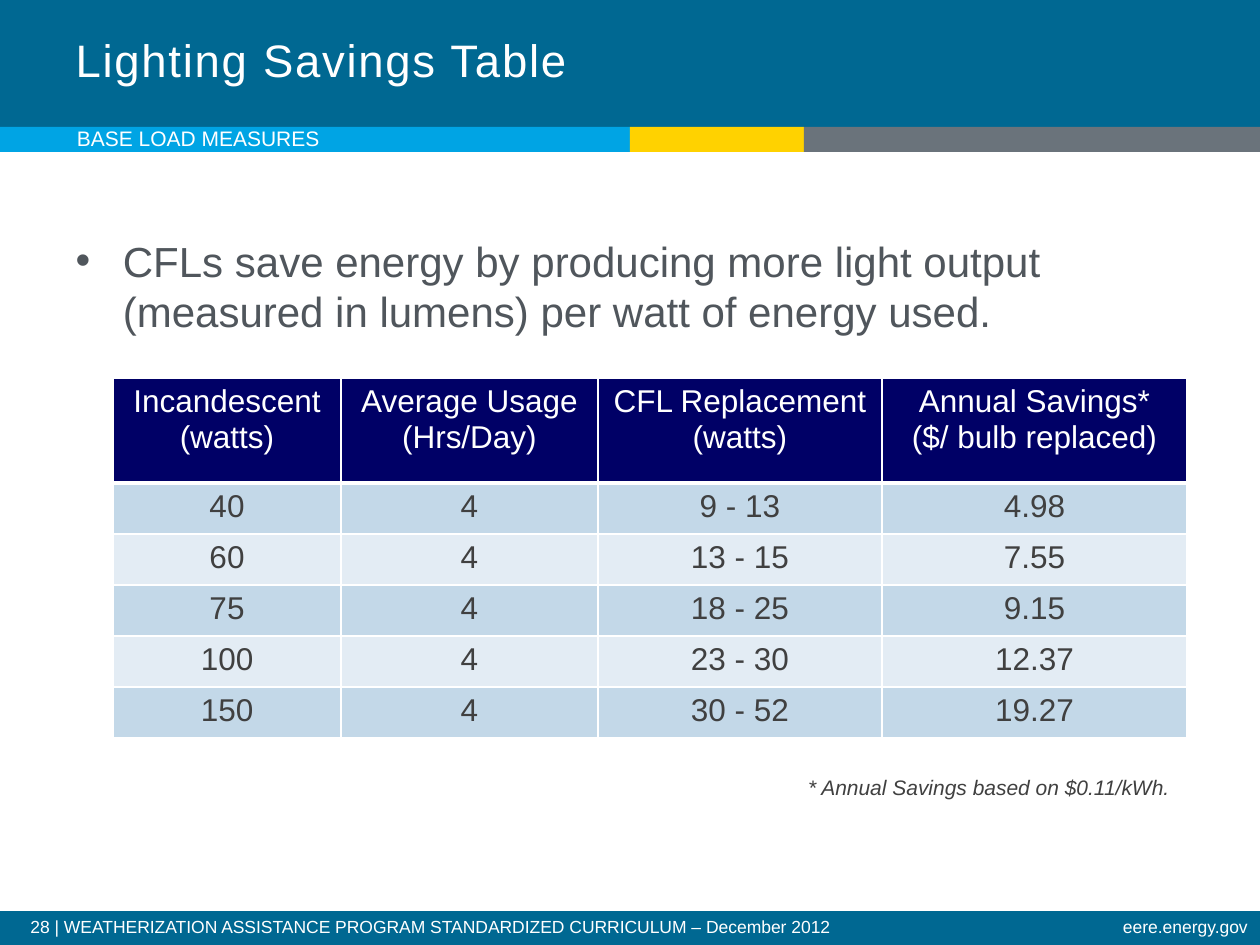
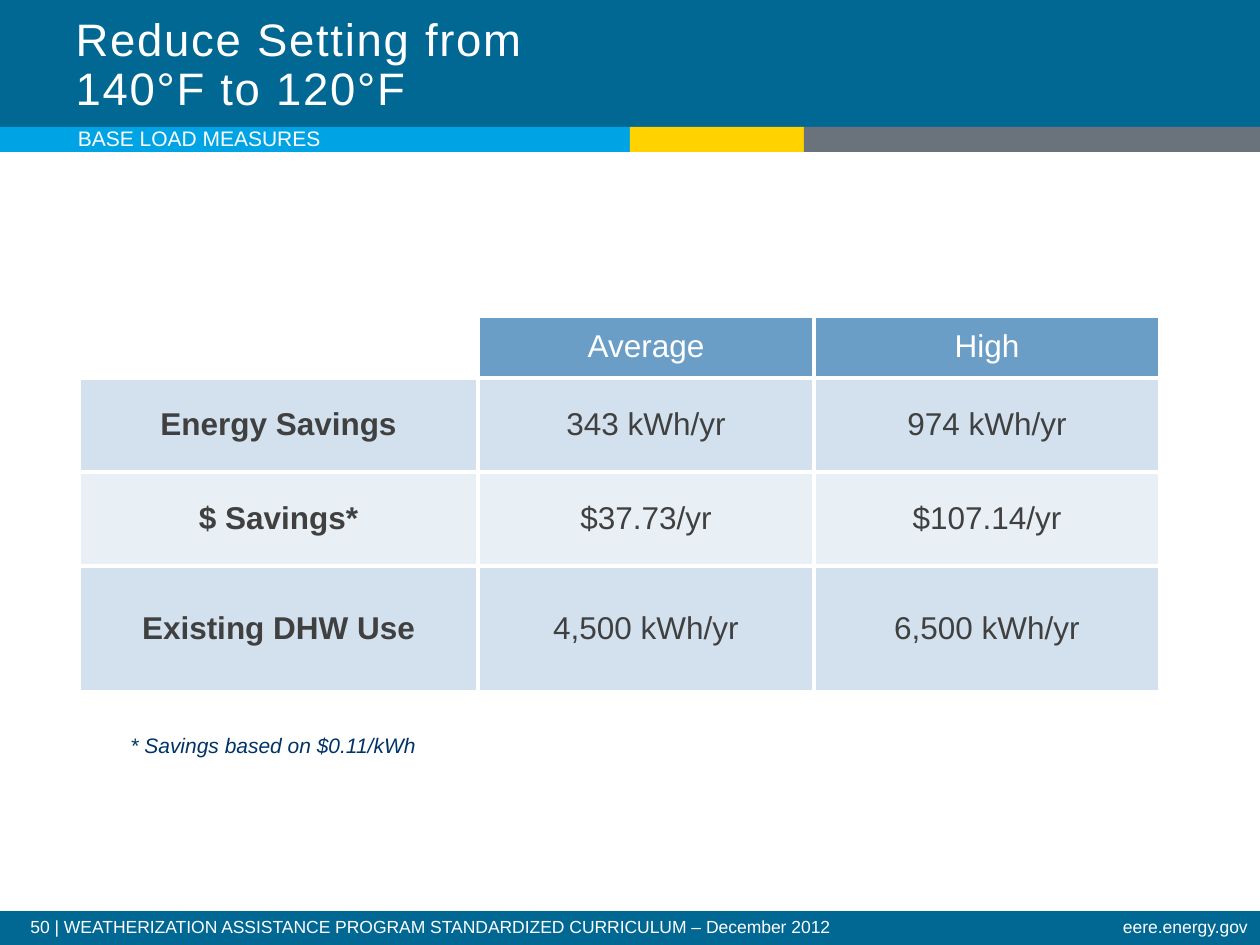
from lxml import etree
from pptx import Presentation
from pptx.dml.color import RGBColor
from pptx.enum.shapes import MSO_SHAPE
from pptx.enum.text import MSO_ANCHOR, MSO_AUTO_SIZE, PP_ALIGN
from pptx.oxml.ns import qn
from pptx.util import Emu, Pt

RECTANGLE = MSO_SHAPE.RECTANGLE
LEFT, CENTER, RIGHT = PP_ALIGN.LEFT, PP_ALIGN.CENTER, PP_ALIGN.RIGHT
TOP, MIDDLE = MSO_ANCHOR.TOP, MSO_ANCHOR.MIDDLE
NO_AUTOFIT = MSO_AUTO_SIZE.NONE

PX_PER_INCH = 126
SLIDE_WIDTH, SLIDE_HEIGHT = 1260, 945
TITLE_LAYOUT, BULLET_LAYOUT = 5, 1

FONT = "Arial"
WHITE, DARK_TEXT, BODY_TEXT, NOTE_BLUE = "FFFFFF", "404040", "50565C", "003366"
TEAL, SKY, YELLOW, GRAY = "006892", "00A4E4", "FFD200", "6A737B"
NAVY, TABLE_BLUE = "000066", "6B9EC6"

BANDS = [
    (0, 0, SLIDE_WIDTH, 127, TEAL),
    (0, 911, SLIDE_WIDTH, 34, TEAL),
    (0, 127, 630, 25, SKY),
    (630, 127, 174, 25, YELLOW),
    (804, 127, 456, 25, GRAY),
]
FOOTER = "WEATHERIZATION ASSISTANCE PROGRAM STANDARDIZED CURRICULUM – December 2012"

LIGHTING_ROWS = [
    ["Incandescent (watts)", "Average Usage (Hrs/Day)", "CFL Replacement (watts)",
     "Annual Savings*\n($/ bulb replaced)"],
    ["40", "4", "9 - 13", "4.98"],
    ["60", "4", "13 - 15", "7.55"],
    ["75", "4", "18 - 25", "9.15"],
    ["100", "4", "23 - 30", "12.37"],
    ["150", "4", "30 - 52", "19.27"],
]
SETTING_ROWS = [
    ["", "Average", "High"],
    ["Energy Savings", "343 kWh/yr", "974 kWh/yr"],
    ["$ Savings*", "$37.73/yr", "$107.14/yr"],
    ["Existing DHW Use", "4,500 kWh/yr", "6,500 kWh/yr"],
]


def px(length):
    return Emu(round(length * 914400 / PX_PER_INCH))


def rgb(color):
    return RGBColor.from_string(color)


def place(shape, left, top, width, height):
    shape.left, shape.top = px(left), px(top)
    shape.width, shape.height = px(width), px(height)


def write(text_frame, text, size, color, align=LEFT, bold=False, italic=False):
    text_frame.text = text
    for paragraph in text_frame.paragraphs:
        paragraph.alignment = align
        font = paragraph.font
        font.name, font.size = FONT, Pt(size)
        font.bold, font.italic = bold, italic
        font.color.rgb = rgb(color)


def add_band(slide, left, top, width, height, color):
    band = slide.shapes.add_shape(RECTANGLE, px(left), px(top), px(width), px(height))
    band.shadow.inherit = False
    band.fill.solid()
    band.fill.fore_color.rgb = rgb(color)
    band.line.fill.background()


def add_text(slide, box, text, size, color, align=LEFT, italic=False,
             anchor=TOP, inset=True):
    frame = slide.shapes.add_textbox(*map(px, box)).text_frame
    frame.word_wrap = True
    frame.vertical_anchor = anchor
    if not inset:
        frame.margin_left = frame.margin_right = 0
        frame.margin_top = frame.margin_bottom = 0
    write(frame, text, size, color, align, italic=italic)
    return frame


def lift_placeholder(slide, placeholder, box):
    """Move a placeholder to its box, in front of the bands."""
    slide.shapes.element.append(placeholder.element)
    place(placeholder, *box)
    placeholder.text_frame.auto_size = NO_AUTOFIT
    return placeholder.text_frame


def add_title(slide, text, box):
    frame = lift_placeholder(slide, slide.shapes.title, box)
    frame.vertical_anchor = MIDDLE
    write(frame, text, 26, WHITE)
    paragraph = frame.paragraphs[0]
    paragraph.line_spacing = Pt(28)
    paragraph._p.get_or_add_pPr().get_or_add_defRPr().set("spc", "100")


def add_bullet(slide, text, box):
    frame = lift_placeholder(slide, slide.placeholders[1], box)
    properties = frame.paragraphs[0]._p.get_or_add_pPr()
    properties.set("marL", str(px(38)))
    properties.set("indent", str(px(-32)))
    write(frame, text, 24, BODY_TEXT)


def add_page(presentation, layout, number, title, title_box, section_left):
    """Add a slide with the bands, footer, title and section label."""
    slide = presentation.slides.add_slide(presentation.slide_layouts[layout])
    for band in BANDS:
        add_band(slide, *band)
    for box, text, align in [((18, 912, 1004, 33), f"{number} | {FOOTER}", LEFT),
                             ((755, 912, 505, 33), "eere.energy.gov", RIGHT)]:
        footer = add_text(slide, box, text, 10, WHITE, align)
        footer.paragraphs[0].line_spacing = 0.9
    add_title(slide, title, title_box)
    add_text(slide, (section_left, 122, 872, 32), "BASE LOAD MEASURES", 12, WHITE,
             anchor=MIDDLE, inset=False)
    return slide


def set_borders(cell, widths):
    """Draw white borders; widths are points for left, right, top, bottom."""
    properties = cell._tc.get_or_add_tcPr()
    for side, width in zip("LRTB", widths):
        line = etree.SubElement(properties, qn(f"a:ln{side}"), w=str(Pt(width)))
        fill = etree.SubElement(line, qn("a:solidFill"))
        etree.SubElement(fill, qn("a:srgbClr"), val=WHITE)


def fill_cell(cell, color, opacity=100):
    cell.fill.solid()
    cell.fill.fore_color.rgb = rgb(color)
    if opacity < 100:
        color_element = cell._tc.tcPr.find(f"{qn('a:solidFill')}/{qn('a:srgbClr')}")
        etree.SubElement(color_element, qn("a:alpha"), val=str(opacity * 1000))


def add_table(slide, left, top, column_widths, row_heights, rows, header_color,
              opacities, border, header_border, anchor=TOP, bold_labels=False):
    """Add a table whose body rows alternate between two opacities."""
    frame = slide.shapes.add_table(
        len(rows), len(column_widths), px(left), px(top),
        px(sum(column_widths)), px(sum(row_heights)))
    table = frame.table
    table.first_row = table.horz_banding = False
    for column, width in zip(table.columns, column_widths):
        column.width = px(width)
    for row, height in zip(table.rows, row_heights):
        row.height = px(height)
    for row_index, texts in enumerate(rows):
        is_header = row_index == 0
        above = header_border if row_index == 1 else border
        below = header_border if is_header else border
        for column_index, text in enumerate(texts):
            cell = table.cell(row_index, column_index)
            cell.vertical_anchor = anchor
            set_borders(cell, (border, border, above, below))
            if not text:
                cell.fill.background()
            elif is_header:
                fill_cell(cell, header_color)
            else:
                fill_cell(cell, TABLE_BLUE, opacities[(row_index - 1) % 2])
            bold = bold_labels and column_index == 0
            write(cell.text_frame, text, 18, WHITE if is_header else DARK_TEXT,
                  CENTER, bold)


def add_lighting_slide(presentation):
    slide = add_page(presentation, BULLET_LAYOUT, 28, "Lighting Savings Table",
                     (63, 0, 742, 125), 77)
    add_bullet(slide, "CFLs save energy by producing more light output "
               "(measured in lumens) per watt of energy used.", (63, 229, 1048, 121))
    add_table(slide, 113, 378, [228, 257, 284, 305], [105] + [51] * 5, LIGHTING_ROWS,
              NAVY, (40, 19), border=1, header_border=3)
    add_text(slide, (122, 775, 1048, 32), "* Annual Savings based on $0.11/kWh.", 12,
             DARK_TEXT, RIGHT, italic=True, inset=False)


def add_setting_slide(presentation):
    slide = add_page(presentation, TITLE_LAYOUT, 50,
                     "Reduce Setting from\v140°F to 120°F", (63, 8, 747, 116), 78)
    add_table(slide, 79, 316, [399, 336, 346], [62, 94, 94, 126], SETTING_ROWS,
              TABLE_BLUE, (30, 15), border=2.25, header_border=2.25,
              anchor=MIDDLE, bold_labels=True)
    add_text(slide, (118, 726, 319, 38), "* Savings based on $0.11/kWh", 12,
             NOTE_BLUE, italic=True)


def main():
    presentation = Presentation()
    presentation.slide_width = px(SLIDE_WIDTH)
    presentation.slide_height = px(SLIDE_HEIGHT)
    add_lighting_slide(presentation)
    add_setting_slide(presentation)
    presentation.save("out.pptx")


if __name__ == "__main__":
    main()
